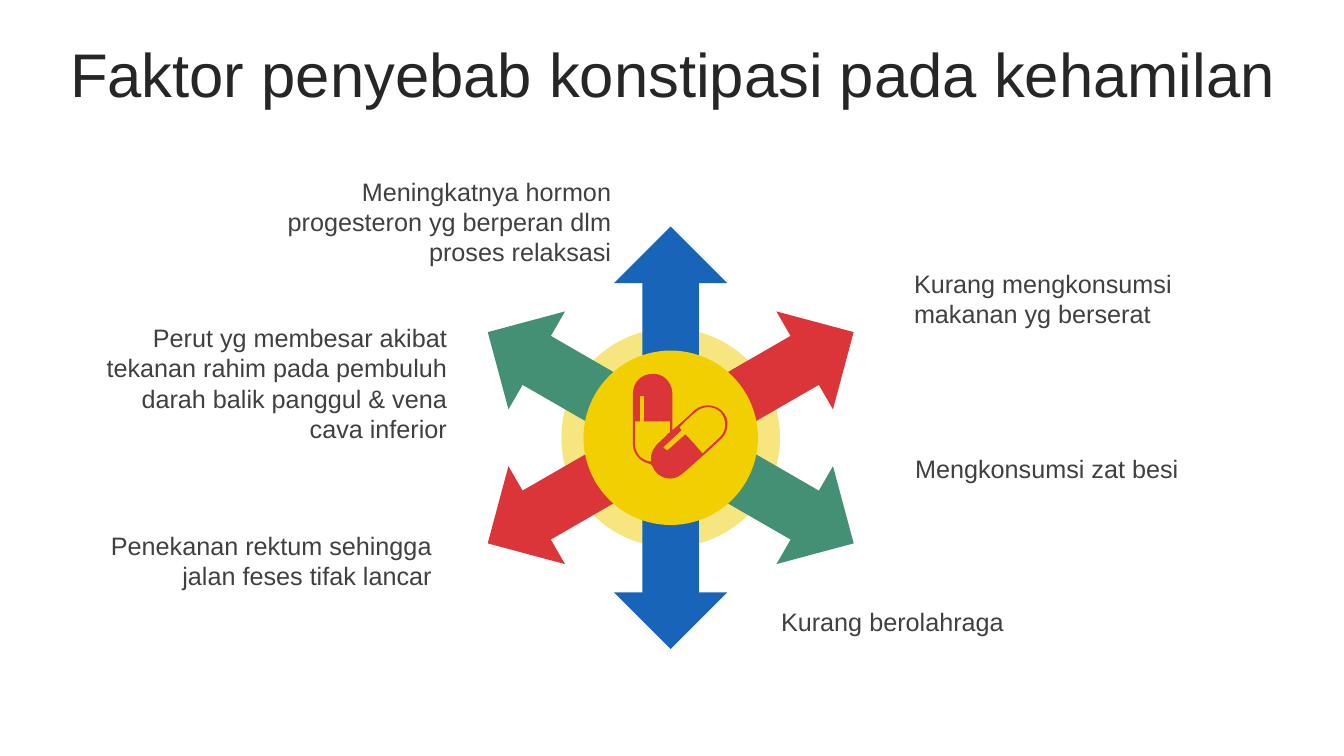
from dataclasses import dataclass

from lxml import etree
from pptx import Presentation
from pptx.dml.color import RGBColor
from pptx.enum.shapes import MSO_SHAPE as Preset
from pptx.enum.text import MSO_ANCHOR as Anchor, PP_ALIGN as Align
from pptx.oxml.ns import qn
from pptx.util import Pt


@dataclass(frozen=True)
class Theme:
    font: str = "Arial"
    title_size: int = 44
    label_size: int = 18
    title: str = "262626"
    label: str = "404040"
    yellow: str = "F1CF01"
    blue: str = "1764B9"
    red: str = "DC3539"
    green: str = "449074"


THEME = Theme()
CENTER = (479.1, 312.7)
LABEL_WIDTH = 257.8

# left, top, height, alignment, text
LABELS = [
    (550.8, 429.8, 28.8, Align.LEFT, "Kurang berolahraga"),
    (646.6, 320.4, 28.8, Align.LEFT, "Mengkonsumsi zat besi"),
    (645.8, 187.9, 51.1, Align.LEFT, "Kurang mengkonsumsi makanan yg berserat"),
    (57.6, 375.1, 51.1, Align.RIGHT,
     "Penekanan rektum sehingga jalan feses tifak lancar"),
    (68.5, 226.8, 94.3, Align.RIGHT,
     "Perut yg membesar akibat tekanan rahim pada pembuluh darah balik "
     "panggul & vena cava inferior"),
    (185.8, 122.2, 72.7, Align.RIGHT,
     "Meningkatnya hormon progesteron yg berperan dlm proses relaksasi"),
]

# Bezier contours in hundredths of an inch: a start, then two handles and an end per curve
PILL_UNIT = 0.72
PILL_BOX = (628, 371, 721, 475)
PILL_OUTLINE = [
    (667, 427), (675, 420), (682, 414), (689, 407), (700, 398), (716, 402), (721, 415),
    (723, 423), (721, 430), (716, 435), (703, 447), (690, 459), (677, 470),
    (667, 479), (652, 475), (647, 462), (646, 461), (645, 460), (644, 460),
    (635, 458), (628, 450), (628, 441), (628, 424), (628, 407), (628, 390),
    (628, 380), (636, 371), (647, 371), (657, 370), (666, 378), (667, 389),
    (667, 399), (667, 409), (667, 419), (667, 422), (667, 424), (667, 427),
]
TILTED_PILL_WINDOW = [
    (676, 427), (670, 433), (664, 438), (658, 444), (660, 445), (660, 446), (662, 447),
    (668, 442), (674, 436), (680, 431), (686, 437), (691, 443), (697, 450),
    (703, 444), (709, 439), (715, 433), (721, 427), (721, 416), (715, 409),
    (709, 403), (699, 402), (691, 408), (685, 413), (680, 418), (674, 424),
    (675, 425), (675, 426), (676, 427),
]
UPRIGHT_PILL_WINDOW = [
    (630, 418), (630, 426), (630, 434), (630, 442), (631, 451), (637, 457), (646, 458),
    (645, 449), (649, 443), (655, 438), (658, 435), (661, 433), (663, 430),
    (664, 430), (665, 429), (665, 428), (665, 425), (665, 421), (665, 418),
    (656, 418), (648, 418), (639, 418), (639, 409), (639, 401), (639, 393),
    (638, 393), (636, 393), (635, 393), (635, 402), (635, 409), (635, 418),
    (633, 418), (632, 418), (630, 418),
]


def paint(shape, color, opacity=None):
    shape.shadow.inherit = False
    shape.fill.solid()
    shape.fill.fore_color.rgb = RGBColor.from_string(color)
    shape.line.fill.background()
    if opacity is not None:
        tint = shape.fill._xPr.find(qn("a:solidFill"))[0]
        etree.SubElement(tint, qn("a:alpha")).set("val", str(opacity * 1000))


def add_centered(shapes, preset, width, height, color, rotation=0, opacity=None):
    """Add a preset shape around the middle of the diagram."""
    shape = shapes.add_shape(preset, Pt(CENTER[0] - width / 2), Pt(CENTER[1] - height / 2),
                             Pt(width), Pt(height))
    shape.rotation = rotation
    paint(shape, color, opacity)


def add_text(page, text, left, top, width, height, *, size, color, align=Align.LEFT,
             anchor=Anchor.TOP, line_spacing=None, space_before=None):
    box = page.shapes.add_textbox(Pt(left), Pt(top), Pt(width), Pt(height))
    frame = box.text_frame
    frame.word_wrap = True
    frame.vertical_anchor = anchor
    para = frame.paragraphs[0]
    para.alignment = align
    para.line_spacing = line_spacing
    para.space_before = space_before
    span = para.add_run()
    span.text = text
    span.font.name = THEME.font
    span.font.size = Pt(size)
    span.font.color.rgb = RGBColor.from_string(color)


def add_segment(geometry, tag, points=()):
    """Append one drawing command with its points, measured from the pill box."""
    segment = etree.SubElement(geometry, qn(tag))
    for x, y in points:
        point = etree.SubElement(segment, qn("a:pt"))
        point.set("x", str(x - PILL_BOX[0]))
        point.set("y", str(y - PILL_BOX[1]))


def add_pills(page):
    """Lay out a freeform on the pill box, then give it curved contours."""
    left, top, right, bottom = PILL_BOX
    builder = page.shapes.build_freeform(left, top, scale=Pt(PILL_UNIT))
    builder.add_line_segments([(right, top), (right, bottom), (left, bottom)])
    pills = builder.convert_to_shape()
    geometry = next(pills._element.iter(qn("a:path")))
    for segment in list(geometry):
        geometry.remove(segment)
    for contour in (PILL_OUTLINE, TILTED_PILL_WINDOW, UPRIGHT_PILL_WINDOW):
        add_segment(geometry, "a:moveTo", contour[:1])
        for first in range(1, len(contour), 3):
            add_segment(geometry, "a:cubicBezTo", contour[first:first + 3])
        add_segment(geometry, "a:close")
    paint(pills, THEME.red)


def add_hub(page):
    add_centered(page.shapes, Preset.OVAL, 156.2, 156.2, THEME.yellow, opacity=50)
    arrows = page.shapes.add_group_shape()
    for index, color in enumerate((THEME.blue, THEME.red, THEME.green)):
        add_centered(arrows.shapes, Preset.UP_DOWN_ARROW, 80.8, 301.8, color,
                     rotation=60 * index)
    add_centered(page.shapes, Preset.OVAL, 124.6, 124.6, THEME.yellow)


def main():
    deck = Presentation()
    deck.slide_width, deck.slide_height = Pt(960), Pt(540)
    page = deck.slides.add_slide(deck.slide_layouts[6])
    add_text(page, "Faktor penyebab konstipasi pada kehamilan", 25.2, 26.6, 911.5, 56.9,
             size=THEME.title_size, color=THEME.title, align=Align.CENTER,
             anchor=Anchor.MIDDLE, line_spacing=0.9, space_before=Pt(10))
    add_hub(page)
    for left, top, height, align, text in LABELS:
        add_text(page, text, left, top, LABEL_WIDTH, height,
                 size=THEME.label_size, color=THEME.label, align=align)
    add_pills(page)
    deck.save("out.pptx")


if __name__ == "__main__":
    main()
